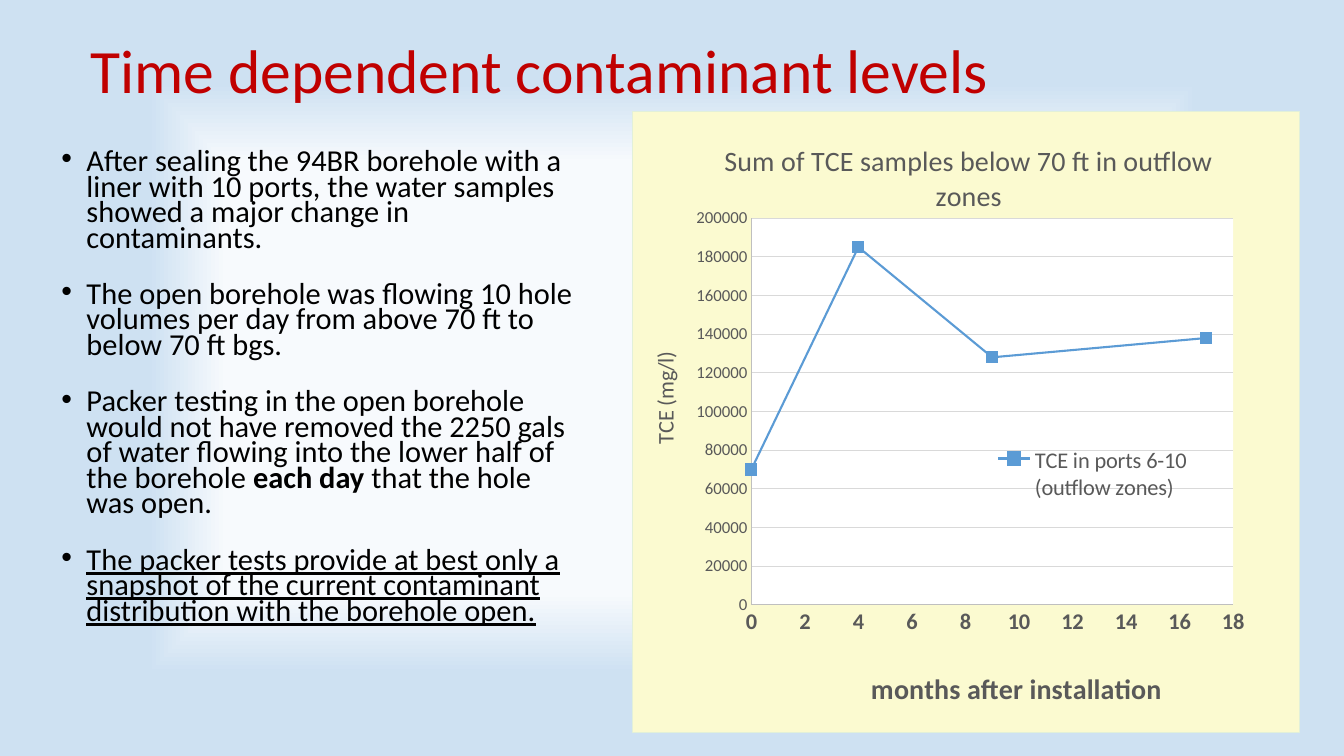
from lxml import etree
from pptx import Presentation
from pptx.chart.data import XyChartData
from pptx.dml.color import RGBColor
from pptx.enum import chart as ch, text
from pptx.oxml import parse_xml
from pptx.oxml.ns import nsdecls, qn
from pptx.util import Inches, Pt

FONT = "Calibri"
RED = RGBColor(0xC0, 0, 0)
BLACK = RGBColor(0, 0, 0)
GREY = RGBColor(0x59, 0x59, 0x59)
AXIS = RGBColor(0xBF, 0xBF, 0xBF)
GRID = RGBColor(0xD9, 0xD9, 0xD9)
BLUE = RGBColor(0x5B, 0x9B, 0xD5)
WHITE = RGBColor(0xFF, 0xFF, 0xFF)
CREAM = RGBColor(0xFB, 0xFA, 0xD0)
PALE_GREEN = RGBColor(0xE2, 0xF0, 0xD9)
BG_INNER = RGBColor(0xF7, 0xFA, 0xFD)
BG_OUTER = RGBColor(0xCE, 0xE1, 0xF2)

# Each bullet is a list of (text, bold, underline) runs
BULLETS = [
    [("After sealing the 94BR borehole with a liner with 10 ports, the water "
      "samples showed a major change in contaminants.", False, False)],
    [("The open borehole was flowing 10 hole volumes per day from above 70 ft "
      "to below 70 ft bgs.", False, False)],
    [("Packer testing in the open borehole would not have removed the 2250 gals "
      "of water flowing into the lower half of the borehole ", False, False),
     ("each day ", True, False),
     ("that the hole was open.", False, False)],
    [("The packer tests provide at best only a snapshot of the current "
      "contaminant distribution with the borehole open.", False, True)],
]
TCE_SAMPLES = [(0, 70000), (4, 185000), (9, 128000), (17, 138000)]


def set_font(font, size, color, bold=False):
    font.name, font.size, font.bold = FONT, Pt(size), bold
    font.color.rgb = color


def set_background(s):
    fill = s.background.fill
    fill.gradient()
    for stop, (pos, color) in zip(fill.gradient_stops,
                                  [(0.57, BG_INNER), (0.78, BG_OUTER)]):
        stop.position, stop.color.rgb = pos, color
    lin = s.element.find(".//" + qn("a:lin"))
    lin.getparent().replace(lin, parse_xml(
        f'<a:path {nsdecls("a")} path="shape">'
        '<a:fillToRect l="50000" t="50000" r="50000" b="50000"/></a:path>'))


def add_text_frame(s, x, y, w, h, anchor):
    tf = s.shapes.add_textbox(Inches(x), Inches(y), Inches(w), Inches(h)).text_frame
    tf.word_wrap = True
    tf.vertical_anchor = anchor
    return tf


def add_title(s, title):
    tf = add_text_frame(s, 0.8, 0, 11.5, 1.45, text.MSO_ANCHOR.MIDDLE)
    tf.text = title
    p = tf.paragraphs[0]
    p.line_spacing = 0.9
    set_font(p.runs[0].font, 44, RED)


def add_bullets(s, bullets):
    tf = add_text_frame(s, 0.51, 1.45, 5.37, 5.13, text.MSO_ANCHOR.TOP)
    for i, runs in enumerate(bullets):
        p = tf.add_paragraph() if i else tf.paragraphs[0]
        p.line_spacing, p.space_before, p.space_after = 0.7, Pt(10), Pt(12)
        pPr = p._p.get_or_add_pPr()
        pPr.set("marL", str(Inches(0.25)))
        pPr.set("indent", str(Inches(-0.25)))
        etree.SubElement(pPr, qn("a:buFont")).set("typeface", "Arial")
        etree.SubElement(pPr, qn("a:buChar")).set("char", "•")
        for words, bold, underline in runs:
            r = p.add_run()
            r.text = words
            set_font(r.font, 21.7, BLACK, bold)
            r.font.underline = underline


def set_layout(parent, index, x, y, w=None, h=None):
    """Place a chart part by fractions of the chart's size."""
    for old in parent.findall(qn("c:layout")):
        parent.remove(old)
    parts = '<c:layoutTarget val="inner"/>' if parent.tag == qn("c:plotArea") else ""
    parts += '<c:xMode val="edge"/><c:yMode val="edge"/>'
    for name, value in zip("xywh", (x, y, w, h)):
        if value is not None:
            parts += f'<c:{name} val="{value}"/>'
    parent.insert(index, parse_xml(
        f'<c:layout {nsdecls("c")}><c:manualLayout>{parts}</c:manualLayout></c:layout>'))


def area_format(fill, border=None):
    line = (f'<a:ln w="{Pt(0.75)}"><a:solidFill><a:srgbClr val="{border}"/>'
            '</a:solidFill></a:ln>' if border else '<a:ln><a:noFill/></a:ln>')
    return parse_xml(f'<c:spPr {nsdecls("c", "a")}><a:solidFill>'
                     f'<a:srgbClr val="{fill}"/></a:solidFill>{line}</c:spPr>')


def set_chart_title(title, words, size, x, y, bold=False):
    tf = title.text_frame
    tf.text = words
    set_font(tf.paragraphs[0].runs[0].font, size, GREY, bold)
    set_layout(title._element, 1, x, y)


def format_axis(axis, top, step, size, bold=False):
    axis.minimum_scale, axis.maximum_scale, axis.major_unit = 0, top, step
    axis.major_tick_mark = axis.minor_tick_mark = ch.XL_TICK_MARK.NONE
    axis.has_major_gridlines = False
    axis.tick_labels.number_format = "General"
    axis.tick_labels.number_format_is_linked = False
    set_font(axis.tick_labels.font, size, GREY, bold)
    axis.format.line.color.rgb, axis.format.line.width = AXIS, Pt(0.75)


def add_tce_chart(s):
    data = XyChartData()
    points = data.add_series("TCE in ports 6-10 (outflow zones)")
    for month, level in TCE_SAMPLES:
        points.add_data_point(month, level)
    chart = s.shapes.add_chart(ch.XL_CHART_TYPE.XY_SCATTER_LINES, Inches(6.27),
                               Inches(1.1), Inches(6.62), Inches(6.17), data).chart
    set_font(chart.font, 10, BLACK)
    chart.plots[0].vary_by_categories = False

    # Line and markers
    series = chart.plots[0].series[0]
    series.smooth = False
    series.format.line.color.rgb, series.format.line.width = BLUE, Pt(1.5)
    series.marker.style, series.marker.size = ch.XL_MARKER_STYLE.SQUARE, 8
    series.marker.format.fill.solid()
    series.marker.format.fill.fore_color.rgb = BLUE
    series.marker.format.line.color.rgb = BLUE

    # Axes and titles
    months, tce = chart.category_axis, chart.value_axis
    format_axis(months, 18, 2, 16, bold=True)
    format_axis(tce, 200000, 20000, 12)
    tce.has_major_gridlines = True
    grid = tce.major_gridlines.format.line
    grid.color.rgb, grid.width = GRID, Pt(0.75)
    chart.has_title = True
    set_chart_title(chart.chart_title,
                    "Sum of TCE samples below 70 ft in outflow zones", 20, 0.13, 0.04)
    set_chart_title(months.axis_title, "months after installation", 20, 0.35, 0.89, True)
    set_chart_title(tce.axis_title, "TCE (mg/l)", 16, 0.02, 0.38)

    # Legend inside the plot
    chart.has_legend = True
    legend = chart.legend
    legend.position = ch.XL_LEGEND_POSITION.RIGHT
    legend.include_in_layout = True
    set_font(legend.font, 16, GREY)
    set_layout(legend._element, 1, 0.52, 0.53, 0.34, 0.11)

    # Chart and plot areas
    space = chart._chartSpace
    plot_area = space.find(".//" + qn("c:plotArea"))
    set_layout(plot_area, 0, 0.178, 0.172, 0.723, 0.623)
    plot_area.append(area_format(WHITE))
    space.find(qn("c:txPr")).addprevious(area_format(CREAM, PALE_GREEN))


def main():
    prs = Presentation()
    prs.slide_width, prs.slide_height = Inches(13.33), Inches(7.5)
    s = prs.slides.add_slide(prs.slide_layouts[6])
    set_background(s)
    add_title(s, "Time dependent contaminant levels")
    add_bullets(s, BULLETS)
    add_tce_chart(s)
    prs.save("out.pptx")


if __name__ == "__main__":
    main()
